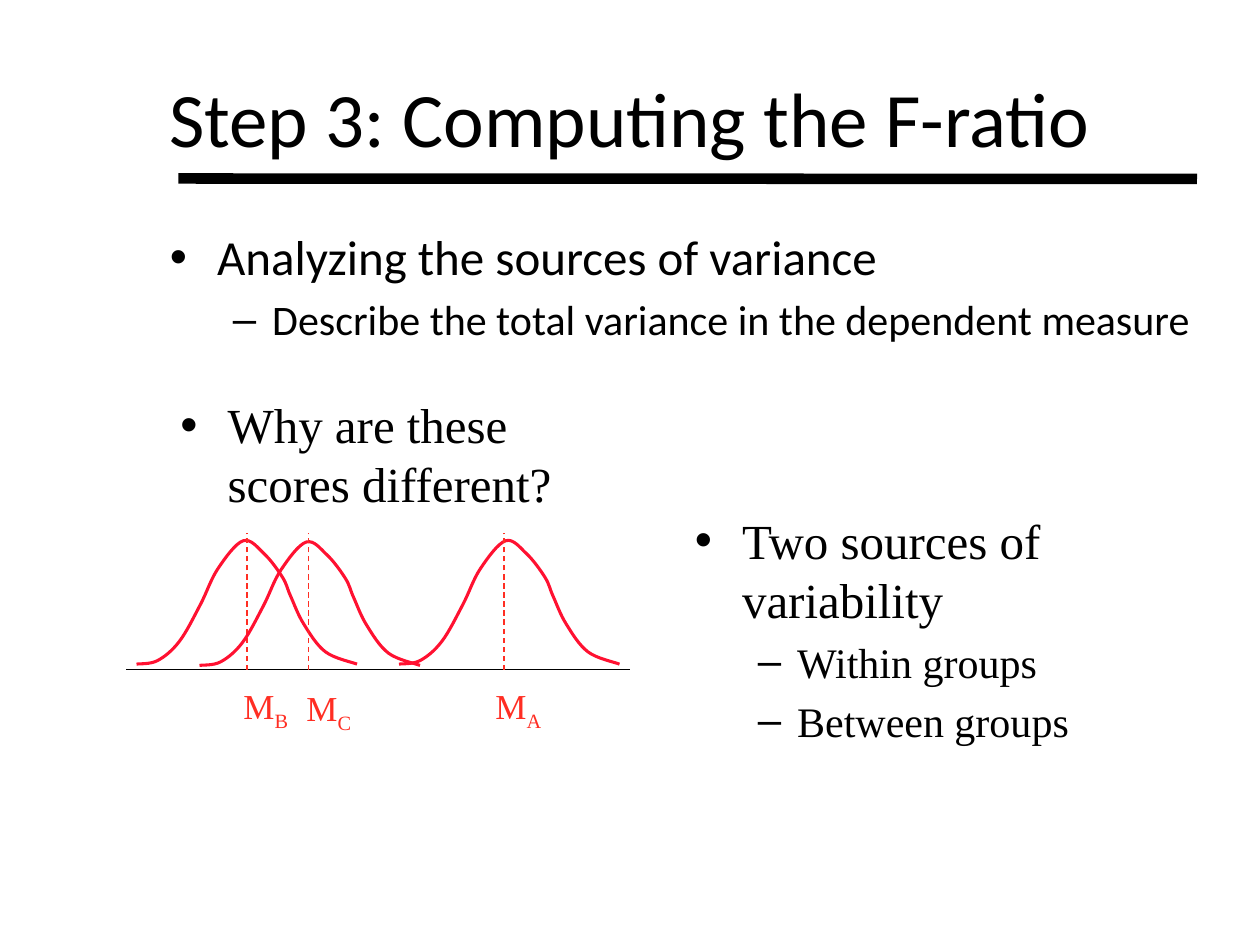
from lxml.etree import SubElement as Sub
from pptx import Presentation
from pptx.dml.color import RGBColor
from pptx.enum.dml import MSO_LINE as Dash
from pptx.enum.shapes import MSO_CONNECTOR as Conn
from pptx.enum.text import MSO_ANCHOR as Anchor, PP_ALIGN as Align
from pptx.oxml.ns import qn
from pptx.util import Pt

SANS, SERIF = "Calibri", "Times New Roman"
BLACK, RED, CURVE = "000000", "FF2E23", "FF1131"
LEVELS = [(28, "•", 27, 27), (24, "–", 58.5, 22.5)]
BELL = [(0, 72), (12, 70), (24.5, 59), (36.5, 38), (46.5, 17.5), (61, 1.5),
        (73, 9), (83.5, 22.5), (88, 33), (95.5, 49), (108, 65), (126, 72)]
GROUPS = [("B", 78, 307.5, 141.25, 132, 387.5), ("A", 228, 307.5, 288, 276, 387.5),
          ("C", 114, 308.25, 176.5, 168, 389)]


def color(code):
    return RGBColor.from_string(code)


class Deck:
    """Holds the style and the current slide."""

    def __init__(self, wide, high):
        self.show = Presentation()
        self.show.slide_width, self.show.slide_height = Pt(wide), Pt(high)
        self.slide = self.show.slides.add_slide(self.show.slide_layouts[6])
        self.shapes = self.slide.shapes

    def font(self, para, face, size, ink=BLACK):
        para.font.name, para.font.size = face, Pt(size)
        para.font.color.rgb = color(ink)

    def box(self, *area):
        frame = self.shapes.add_textbox(*map(Pt, area)).text_frame
        frame.word_wrap = True
        return frame

    def title(self, text, *area):
        frame = self.box(*area)
        frame.vertical_anchor = Anchor.MIDDLE
        para = frame.paragraphs[0]
        para.text, para.alignment = text, Align.CENTER
        self.font(para, SANS, 44)

    def bullets(self, items, face, *area):
        frame = self.box(*area)
        for i, (level, text) in enumerate(items):
            para = frame.add_paragraph() if i else frame.paragraphs[0]
            size, mark, left, hang = LEVELS[level]
            para.text, para.level = text, level
            para.space_before = Pt(size / 5 if i else 0)
            self.font(para, face, size)
            props = para._p.get_or_add_pPr()
            props.set("marL", str(Pt(left)))
            props.set("indent", str(-Pt(hang)))
            style = props.find(qn("a:defRPr"))
            for tag, key, value in (("a:buFont", "typeface", "Arial"),
                                    ("a:buChar", "char", mark)):
                part = Sub(props, qn(tag))
                part.set(key, value)
                style.addprevious(part)

    def label(self, base, sub, *area):
        para = self.box(*area).paragraphs[0]
        para.add_run().text = base
        low = para.add_run()
        low.text = sub
        low._r.get_or_add_rPr().set("baseline", "-25000")
        self.font(para, SERIF, 20, RED)

    def line(self, ends, ink, width, dash=None):
        line = self.shapes.add_connector(Conn.STRAIGHT, *map(Pt, ends))
        line.line.color.rgb, line.line.width = color(ink), Pt(width)
        if dash:
            line.line.dash_style = dash
        Sub(line._element.spPr, qn("a:effectLst"))

    def curve(self, knots, left, top):
        dots = [(Pt(left + x), Pt(top + y)) for x, y in knots]
        pen = self.shapes.build_freeform(*dots[0])
        pen.add_line_segments(dots[1:], close=False)
        shape = pen.convert_to_shape()
        shape.shadow.inherit = False
        shape.fill.background()
        shape.line.color.rgb, shape.line.width = color(CURVE), Pt(1.75)
        self.smooth(shape, knots)

    def smooth(self, shape, knots):
        ends = [knots[0], *knots, knots[-1]]
        steps = list(shape._element.iter(qn("a:lnTo")))
        for step, a, b, c, d in zip(steps, ends, ends[1:], ends[2:], ends[3:]):
            first = [q + (r - p) / 6 for p, q, r in zip(a, b, c)]
            second = [q - (r - p) / 6 for p, q, r in zip(b, c, d)]
            step.tag = qn("a:cubicBezTo")
            step.clear()
            for x, y in (first, second, c):
                dot = Sub(step, qn("a:pt"))
                dot.set("x", str(Pt(x)))
                dot.set("y", str(Pt(y - BELL[5][1])))


def main():
    deck = Deck(720, 540)
    deck.line((102, 102, 684, 102.25), BLACK, 6)
    deck.title("Step 3: Computing the F-ratio", 36, 21.5, 648, 90)
    deck.bullets([(0, "Analyzing the sources of variance"),
                  (1, "Describe the total variance in the dependent measure")],
                 SANS, 90, 126, 612, 96)
    deck.bullets([(0, "Why are these scores different?")], SERIF, 96, 222, 246, 78)
    deck.line((72, 382.75, 360, 382.75), BLACK, 0.75)
    for name, left, top, mean, text, under in GROUPS:
        deck.curve(BELL, left, top)
        deck.line((mean, 382.75, mean, 304.5), RED, 0.75, Dash.DASH)
        deck.label("M", name, text, under, 42, 31)
    deck.bullets([(0, "Two sources of variability"), (1, "Within groups"),
                  (1, "Between groups")], SERIF, 390, 288, 294, 156)
    deck.show.save("out.pptx")


if __name__ == "__main__":
    main()
